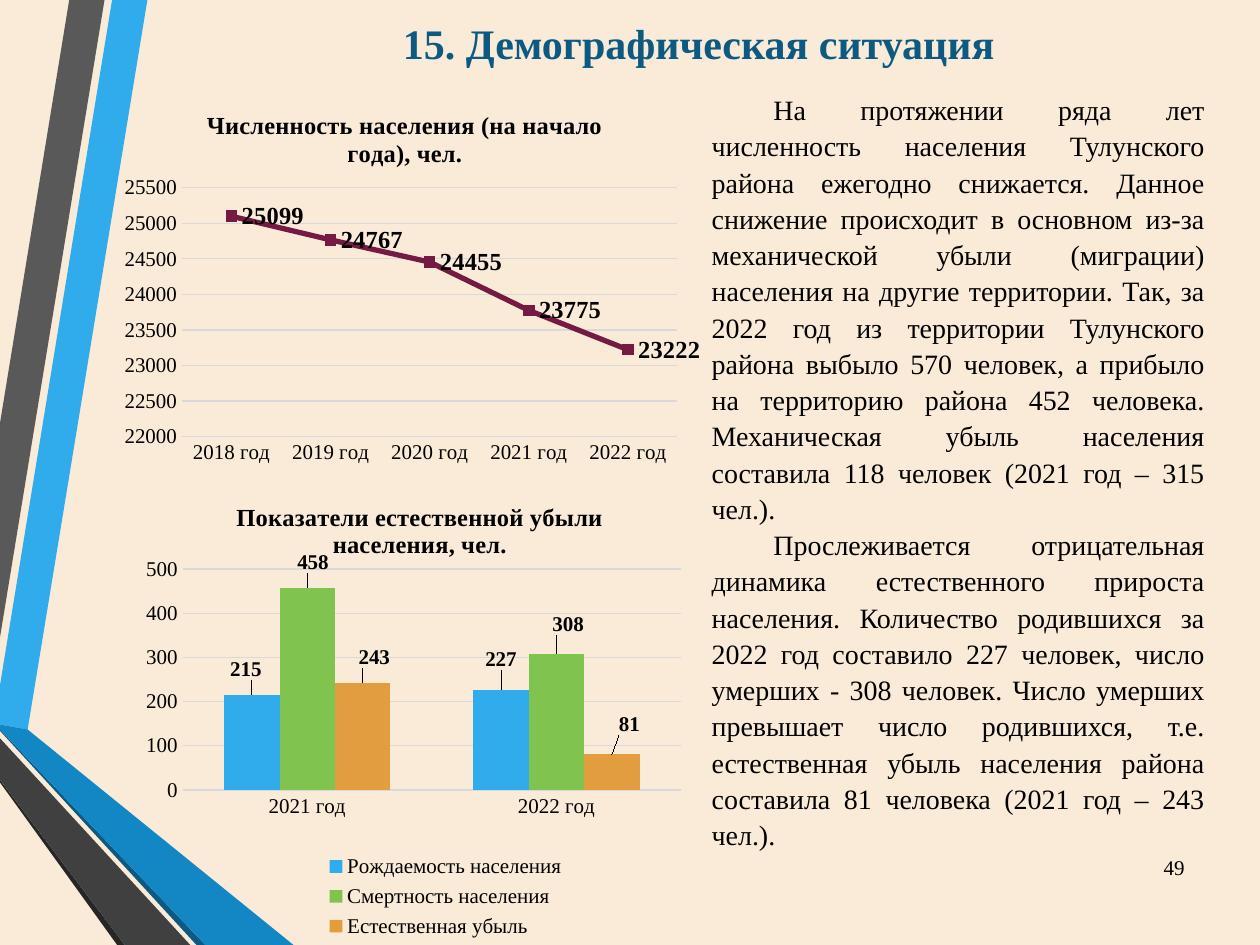
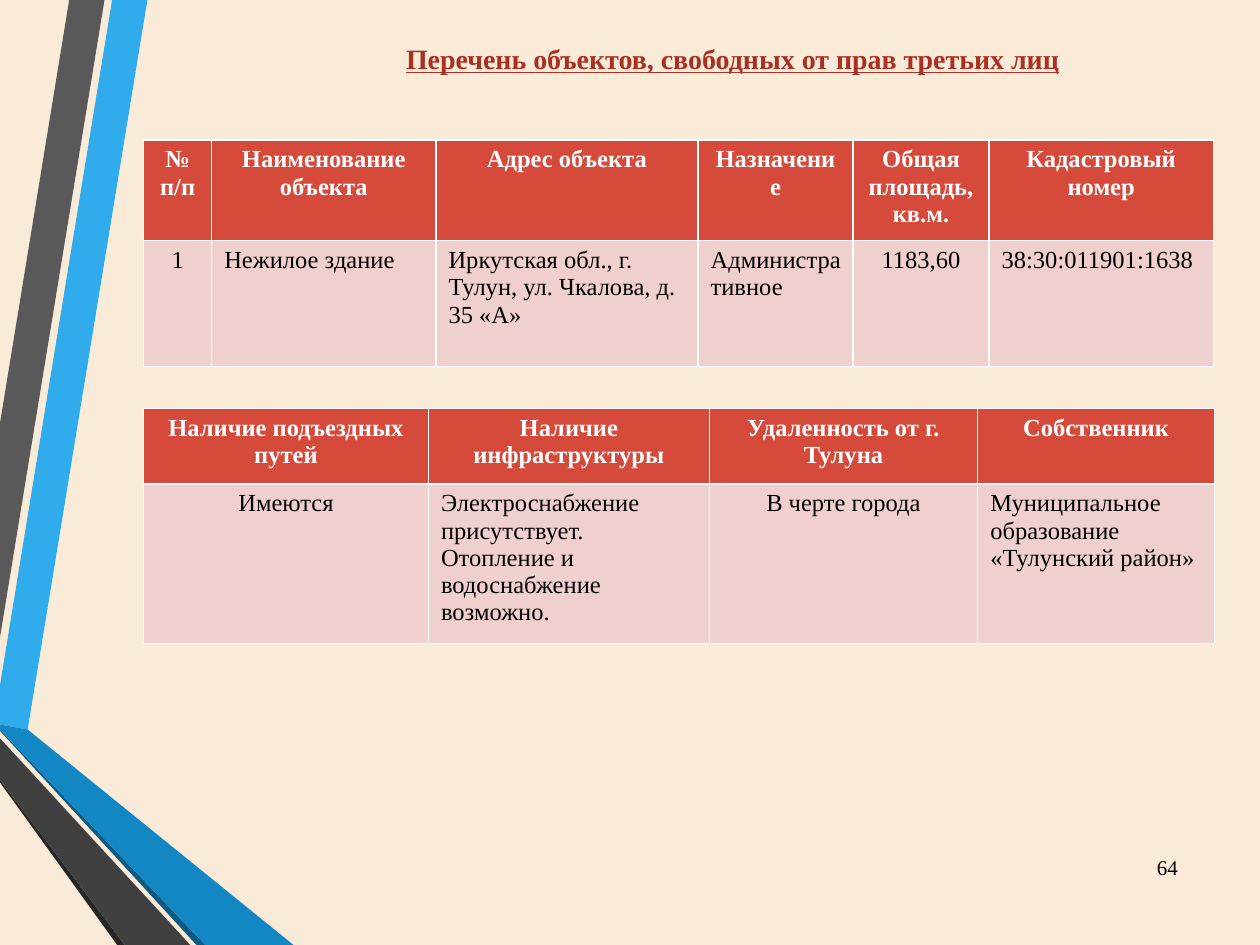
from lxml import etree
from pptx import Presentation
from pptx.chart.data import CategoryChartData
from pptx.dml.color import RGBColor
from pptx.enum import chart as ch, text as tx
from pptx.oxml import ns
from pptx.util import Inches, Pt

FONT = "Times New Roman"
HUES = {
    "page": "F9EBD8", "black": "000000", "white": "FFFFFF", "grid": "D9D9D9",
    "navy": "0C5A82", "rust": "A93023", "head": "D64A3B", "cell": "F0D0CE",
    "sky": "30ACEC", "blue": "1287C3", "gray": "595959", "coal": "404040",
    "ink": "262626", "green": "80C34F", "gold": "E29D3E", "wine": "751A43",
}
BANDS = [
    ("sky", [(0, 5.44), (0, 5.75), (0.22, 5.79), (1.17, 0), (0.89, 0)]),
    ("gray", [(0.83, 0), (0.55, 0), (0, 3.36), (0, 5.06)]),
    ("ink", [(0, 6.19), (0, 6.21), (0.93, 7.5), (0.99, 7.5)]),
    ("navy", [(0, 5.79), (0, 5.8), (1.56, 7.5), (1.63, 7.5)]),
    ("blue", [(0, 5.79), (1.63, 7.5), (2.33, 7.5), (0.22, 5.79), (0, 5.75)]),
    ("coal", [(0, 6.19), (0.99, 7.5), (1.51, 7.5), (0, 5.86)]),
]
STORY = [
    "На протяжении ряда лет численность населения Тулунского района ежегодно "
    "снижается. Данное снижение происходит в основном из-за механической убыли "
    "(миграции) населения на другие территории. Так, за 2022 год из территории "
    "Тулунского района выбыло 570 человек, а прибыло на территорию района 452 "
    "человека. Механическая убыль населения составила 118 человек (2021 год – 315 чел.).",
    "Прослеживается отрицательная динамика естественного прироста населения. "
    "Количество родившихся за 2022 год составило 227 человек, число умерших - 308 "
    "человек. Число умерших превышает число родившихся, т.е. естественная убыль "
    "населения района составила 81 человека (2021 год – 243 чел.).",
]
PEOPLE = {
    "kind": ch.XL_CHART_TYPE.LINE_MARKERS_STACKED,
    "box": (0.91, 0.68, 4.65, 3.07),
    "title": "Численность населения (на начало года), чел.",
    "spot": (0.15, 0.05),
    "plot": (0.115, 0.264, 0.847, 0.644),
    "range": (22000, 25500, 500),
    "cats": ["2018 год", "2019 год", "2020 год", "2021 год", "2022 год"],
    "rows": [("Численность населения", [25099, 24767, 24455, 23775, 23222])],
}
LOSS = {
    "kind": ch.XL_CHART_TYPE.COLUMN_CLUSTERED,
    "box": (0.91, 3.83, 4.65, 3.67),
    "title": "Показатели естественной убыли населения, чел.",
    "spot": (0.2, 0.03),
    "plot": (0.116, 0.187, 0.851, 0.478),
    "range": (0, 500, 100),
    "cats": ["2021 год", "2022 год"],
    "rows": [("Рождаемость населения", [215, 227]),
             ("Смертность населения", [458, 308]),
             ("Естественная убыль", [243, 81])],
}
BARS = [
    ("sky", [(-0.01, -0.02), (0, -0.03)]),
    ("green", [(0.01, -0.02), (0.02, -0.03)]),
    ("gold", [(0.02, -0.02), (0.03, -0.03)]),
]
TABLES = [
    (1.11, [0.54, 1.78, 2.08, 1.23, 1.08, 1.78], [0.69, 1], {0, 4}, [
        ["№ п/п", "Наименование объекта", "Адрес объекта", "Назначение",
         "Общая площадь, кв.м.", "Кадастровый номер"],
        ["1", "Нежилое здание", "Иркутская обл., г. Тулун, ул. Чкалова, д. 35 «А»",
         "Административное", "1183,60", "38:30:011901:1638"]]),
    (3.24, [2.26, 2.23, 2.13, 1.88], [0.6, 0.97], {0, 2}, [
        ["Наличие подъездных путей", "Наличие инфраструктуры",
         "Удаленность от г. Тулуна", "Собственник"],
        ["Имеются",
         "Электроснабжение присутствует.\nОтопление и водоснабжение возможно.",
         "В черте города", "Муниципальное образование «Тулунский район»"]]),
]
MID, LEFT, RIGHT, FULL = (tx.PP_ALIGN.CENTER, tx.PP_ALIGN.LEFT,
                          tx.PP_ALIGN.RIGHT, tx.PP_ALIGN.JUSTIFY)


def hue(name):
    return RGBColor.from_string(HUES[name])


def paint(fill, name):
    fill.solid()
    fill.fore_color.rgb = hue(name)


def style(font, size, color="black", bold=False):
    font.name, font.size, font.bold = FONT, Pt(size), bold
    font.color.rgb = hue(color)


def write(frame, lines, size, color="black", bold=False, align=LEFT, indent=0):
    for i, line in enumerate(lines):
        par = frame.paragraphs[0] if i == 0 else frame.add_paragraph()
        par.alignment = align
        if indent:
            par._p.get_or_add_pPr().set("indent", str(Inches(indent)))
        run = par.add_run()
        run.text = line
        style(run.font, size, color, bold)
    return frame


def put(shape, box):
    shape.left, shape.top, shape.width, shape.height = map(Inches, box)


def add_text(slide, box, lines, size, **look):
    frame = slide.shapes.add_textbox(*map(Inches, box)).text_frame
    frame.word_wrap = True
    frame.vertical_anchor = tx.MSO_ANCHOR.MIDDLE
    return write(frame, lines, size, **look)


def start(deck, title, box, size, color, number, align, indent=0):
    slide = deck.slides.add_slide(deck.slide_layouts[5])
    for name, pts in BANDS:
        pts = [(Inches(x), Inches(y)) for x, y in pts]
        pen = slide.shapes.build_freeform(*pts[0], scale=1.0)
        pen.add_line_segments(pts[1:], close=True)
        band = pen.convert_to_shape()
        band.shadow.inherit = False
        paint(band.fill, name)
        band.line.fill.background()
    put(slide.shapes.title, box)
    frame = slide.shapes.title.text_frame
    frame.vertical_anchor = tx.MSO_ANCHOR.MIDDLE
    write(frame, [title], size, color, True, MID, indent)
    add_text(slide, (9.03, 6.68, 0.47, 0.4), [number], 12, align=align)
    return slide


def place(node, at, spot, inner=False, shift=False):
    for old in node.findall(ns.qn("c:layout")):
        node.remove(old)
    layout = etree.Element(ns.qn("c:layout"))
    manual = etree.SubElement(layout, ns.qn("c:manualLayout"))
    keys = "xywh"[:len(spot)]
    parts = [("layoutTarget", "inner")] if inner else []
    if not shift:
        parts += [(k + "Mode", "edge") for k in keys if k in "xy"]
    for tag, val in parts + list(zip(keys, spot)):
        etree.SubElement(manual, ns.qn("c:" + tag)).set("val", str(val))
    node.insert(at, layout)


def add_chart(slide, info):
    data = CategoryChartData()
    data.categories = info["cats"]
    for name, vals in info["rows"]:
        data.add_series(name, vals)
    chart = slide.shapes.add_chart(info["kind"], *map(Inches, info["box"]), data).chart
    style(chart.font, 12)
    chart.has_legend = False
    chart.has_title = True
    write(chart.chart_title.text_frame, [info["title"]], 14, bold=True, align=MID)
    place(chart.chart_title._element, 1, info["spot"])
    place(chart._chartSpace.chart.plotArea, 0, info["plot"], inner=True)
    val, cat = chart.value_axis, chart.category_axis
    val.minimum_scale, val.maximum_scale, val.major_unit = info["range"]
    for axis in (val, cat):
        axis.major_tick_mark = axis.minor_tick_mark = ch.XL_TICK_MARK.NONE
        axis.format.line.fill.background()
        style(axis.tick_labels.font, 12)
    grid = val.major_gridlines.format.line
    grid.width, grid.color.rgb = Pt(0.75), hue("grid")
    chart.plots[0].vary_by_categories = False
    return chart


def add_people(slide):
    chart = add_chart(slide, PEOPLE)
    edge = chart.category_axis.format.line
    edge.width, edge.color.rgb = Pt(0.75), hue("grid")
    row = chart.plots[0].series[0]
    row.smooth = False
    row.format.line.width, row.format.line.color.rgb = Pt(3), hue("wine")
    row.marker.style, row.marker.size = ch.XL_MARKER_STYLE.SQUARE, 6
    paint(row.marker.format.fill, "wine")
    row.marker.format.line.color.rgb = hue("wine")
    row.data_labels.show_value = True
    row.data_labels.position = ch.XL_LABEL_POSITION.RIGHT
    style(row.data_labels.font, 14, bold=True)


def add_loss(slide):
    chart = add_chart(slide, LOSS)
    plot = chart.plots[0]
    plot.gap_width, plot.overlap = 150, 0
    for row, (color, moves) in zip(plot.series, BARS):
        paint(row.format.fill, color)
        row.data_labels.show_value = True
        style(row.data_labels.font, 12, bold=True)
        for i, move in enumerate(moves):
            label = row.points[i].data_label
            style(label.font, 12, bold=True)
            label.position = ch.XL_LABEL_POSITION.OUTSIDE_END
            place(label._get_or_add_dLbl(), 1, move, shift=True)
    chart.has_legend = True
    key = chart.legend
    key.position = ch.XL_LEGEND_POSITION.BOTTOM
    key.include_in_layout = False
    style(key.font, 12)
    place(key._element, 1, (0.35, 0.79, 0.43, 0.21))


def add_table(slide, top, cols, rows, mids, cells):
    box = (1.14, top, sum(cols), sum(rows))
    table = slide.shapes.add_table(len(rows), len(cols), *map(Inches, box)).table
    table.horz_banding = False
    for col, wide in zip(table.columns, cols):
        col.width = Inches(wide)
    for r, line in enumerate(cells):
        table.rows[r].height = Inches(rows[r])
        head = r == 0
        for c, words in enumerate(line):
            cell = table.cell(r, c)
            paint(cell.fill, "head" if head else "cell")
            write(cell.text_frame, words.split("\n"), 14,
                  "white" if head else "black", head,
                  MID if head or c in mids else LEFT)


def main():
    deck = Presentation()
    deck.slide_width, deck.slide_height = Inches(10), Inches(7.5)
    paint(deck.slide_master.background.fill, "page")

    slide = start(deck, "15. Демографическая ситуация", (1.09, 0, 8.91, 0.68),
                  24, "navy", "49", RIGHT)
    frame = add_text(slide, (5.55, 0.31, 4.11, 6.85), STORY, 16,
                     align=FULL, indent=0.49)
    for par in frame.paragraphs:
        par.line_spacing = 1.08
    add_loss(slide)
    add_people(slide)

    slide = start(deck, "Перечень объектов, свободных от прав третьих лиц",
                  (1.14, 0, 8.86, 0.92), 16, "rust", "64", MID, 0.49)
    slide.shapes.title.text_frame.paragraphs[0].runs[0].font.underline = True
    for table in TABLES:
        add_table(slide, *table)
    deck.save("out.pptx")


if __name__ == "__main__":
    main()
